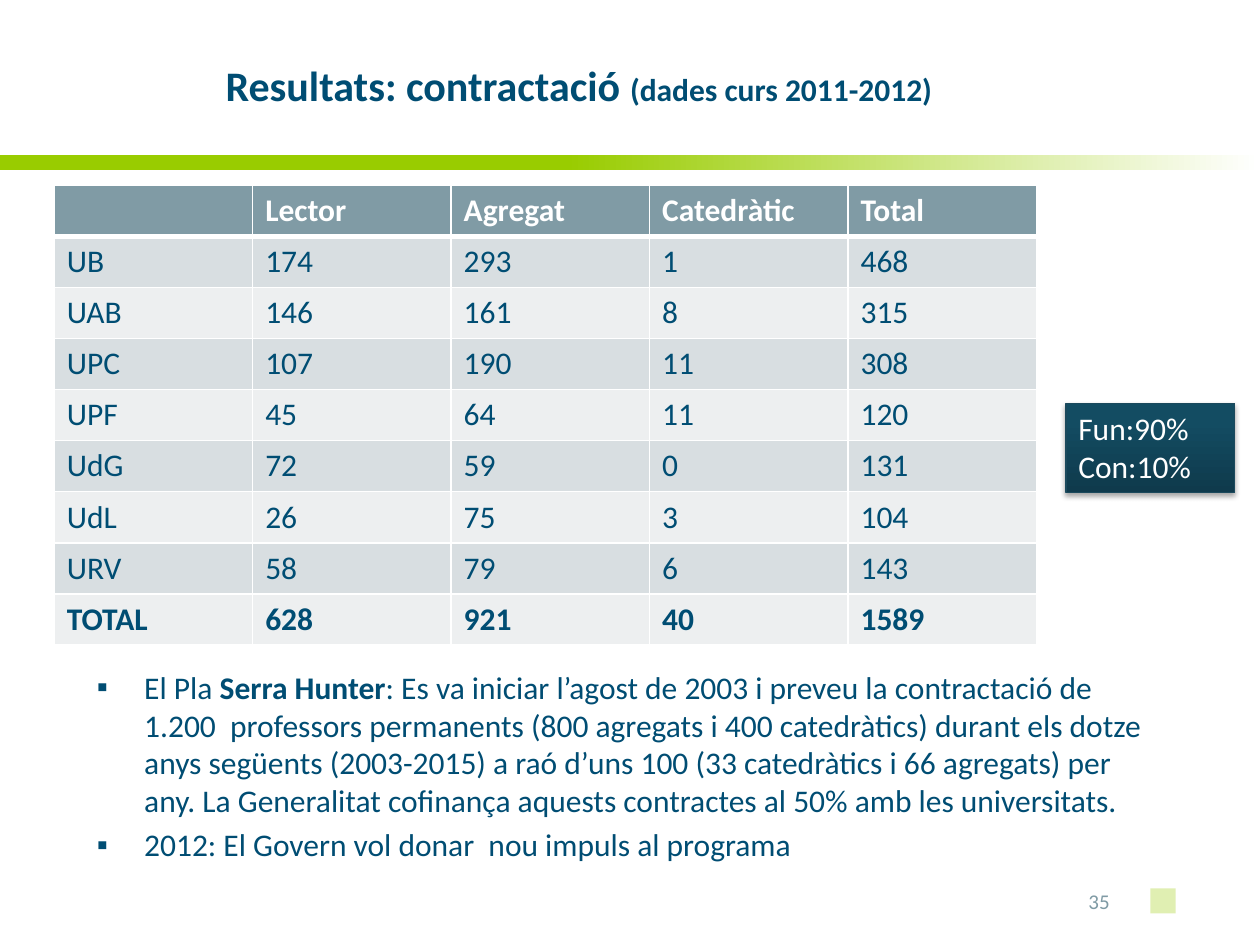
from lxml.etree import SubElement
from pptx import Presentation
from pptx.dml.color import RGBColor
from pptx.enum.shapes import MSO_SHAPE
from pptx.enum.text import MSO_ANCHOR, MSO_AUTO_SIZE, PP_ALIGN
from pptx.oxml import parse_xml
from pptx.oxml.ns import nsdecls, qn
from pptx.util import Pt

NAVY, WHITE, GREEN = "004D73", "FFFFFF", "99CC00"
SLATE, DARK_ROW, LIGHT_ROW = "809BA5", "D8DEE1", "EDEFF0"

HEADINGS = ["", "Lector", "Agregat", "Catedràtic", "Total"]
STAFF = [
    ["UB", "174", "293", "1", "468"],
    ["UAB", "146", "161", "8", "315"],
    ["UPC", "107", "190", "11", "308"],
    ["UPF", "45", "64", "11", "120"],
    ["UdG", "72", "59", "0", "131"],
    ["UdL", "26", "75", "3", "104"],
    ["URV", "58", "79", "6", "143"],
    ["TOTAL", "628", "921", "40", "1589"],
]
BULLETS = [
    [
        ("El Pla ", False),
        ("Serra Hunter", True),
        (": Es va iniciar l’agost de 2003 i preveu la contractació de "
         "1.200  professors permanents (800 agregats i 400 catedràtics) durant els dotze "
         "anys següents (2003-2015) a raó d’uns 100 (33 catedràtics i 66 agregats) per "
         "any. La Generalitat cofinança aquests contractes al 50% amb les universitats.", False),
    ],
    [("2012: El Govern vol donar  nou impuls al programa", False)],
]


def color(value):
    return RGBColor.from_string(value)


class SlideBuilder:
    font_name = "Calibri"
    text_size = 18

    def __init__(self, slide):
        self.slide = slide

    def place(self, shape, left, top, width, height):
        shape.left, shape.top = Pt(left), Pt(top)
        shape.width, shape.height = Pt(width), Pt(height)

    def run(self, paragraph, text, ink=NAVY, size=text_size, bold=False):
        run = paragraph.add_run()
        run.text = text
        run.font.name = self.font_name
        run.font.size = Pt(size)
        run.font.bold = bold
        run.font.color.rgb = color(ink)

    def title(self, box, runs):
        shape = self.slide.shapes.title
        self.place(shape, *box)
        frame = shape.text_frame
        frame.auto_size = MSO_AUTO_SIZE.NONE
        frame.vertical_anchor = MSO_ANCHOR.MIDDLE
        paragraph = frame.paragraphs[0]
        paragraph.alignment = PP_ALIGN.LEFT
        for text, size in runs:
            self.run(paragraph, text, size=size, bold=True)

    def bullets(self, box, items):
        shape = self.slide.placeholders[1]
        self.place(shape, *box)
        frame = shape.text_frame
        frame.auto_size = MSO_AUTO_SIZE.NONE
        for index, runs in enumerate(items):
            paragraph = frame.add_paragraph() if index else frame.paragraphs[0]
            properties = paragraph._p.get_or_add_pPr()
            properties.set("marL", str(Pt(27)))
            properties.set("indent", str(-Pt(27)))
            SubElement(properties, qn("a:buFont"), typeface="Arial")
            SubElement(properties, qn("a:buChar"), char="▪")
            paragraph.space_before = Pt(3.6 if index else 0)
            for text, bold in runs:
                self.run(paragraph, text, bold=bold)

    def label(self, box, text, ink, size):
        shape = self.slide.shapes.add_textbox(*map(Pt, box))
        frame = shape.text_frame
        frame.word_wrap = True
        frame.vertical_anchor = MSO_ANCHOR.MIDDLE
        self.run(frame.paragraphs[0], text, ink, size)

    def rectangle(self, box, fill, line=None):
        shape = self.slide.shapes.add_shape(MSO_SHAPE.RECTANGLE, *map(Pt, box))
        shape.shadow.inherit = False
        shape.fill.solid()
        shape.fill.fore_color.rgb = color(fill)
        if line:
            shape.line.color.rgb = color(line)
            shape.line.width = Pt(0.75)
        else:
            shape.line.fill.background()
        return shape

    def gradient(self, shape, stops, angle):
        stop_list = "".join(
            f'<a:gs pos="{position * 1000}"><a:srgbClr val="{value}"/></a:gs>'
            for position, value in stops
        )
        solid = shape._element.spPr.find(qn("a:solidFill"))
        solid.getparent().replace(solid, parse_xml(
            f'<a:gradFill {nsdecls("a")} rotWithShape="1"><a:gsLst>{stop_list}</a:gsLst>'
            f'<a:lin ang="{angle * 60000}" scaled="0"/></a:gradFill>'
        ))

    def transparency(self, shape, opacity):
        ink = shape._element.spPr.find(qn("a:solidFill"))[0]
        SubElement(ink, qn("a:alpha"), val=str(opacity * 1000))

    def drop_shadow(self, shape, opacity, blur, distance):
        effects = shape._element.spPr.find(qn("a:effectLst"))
        effects.append(parse_xml(
            f'<a:outerShdw {nsdecls("a")} blurRad="{Pt(blur)}" dist="{Pt(distance)}" '
            f'dir="5400000" rotWithShape="0"><a:srgbClr val="000000">'
            f'<a:alpha val="{opacity * 1000}"/></a:srgbClr></a:outerShdw>'
        ))

    def callout(self, box, lines, stops):
        shape = self.rectangle(box, stops[0][1], "1B495C")
        self.gradient(shape, stops, 270)
        self.drop_shadow(shape, 35, 3.1, 1.8)
        frame = shape.text_frame
        frame.word_wrap = True
        frame.vertical_anchor = MSO_ANCHOR.TOP
        for index, text in enumerate(lines):
            paragraph = frame.add_paragraph() if index else frame.paragraphs[0]
            paragraph.alignment = PP_ALIGN.LEFT
            self.run(paragraph, text, WHITE)

    def borders(self, cell, top, bottom):
        properties = cell._tc.get_or_add_tcPr()
        for side, width in (("L", 1), ("R", 1), ("T", top), ("B", bottom)):
            line = SubElement(properties, qn(f"a:ln{side}"), w=str(Pt(width)))
            SubElement(SubElement(line, qn("a:solidFill")), qn("a:srgbClr"), val=WHITE)

    def table(self, box, rows, widths):
        frame = self.slide.shapes.add_table(len(rows), len(widths), *map(Pt, box))
        table = frame.table
        for column, width in zip(table.columns, widths):
            column.width = Pt(width)
        for row_index, values in enumerate(rows):
            table.rows[row_index].height = Pt(box[3] / len(rows))
            header = row_index == 0
            bold = header or row_index == len(rows) - 1
            fill = SLATE if header else DARK_ROW if row_index % 2 else LIGHT_ROW
            for column_index, text in enumerate(values):
                cell = table.cell(row_index, column_index)
                self.borders(cell, 3 if row_index == 1 else 1, 3 if header else 1)
                cell.fill.solid()
                cell.fill.fore_color.rgb = color(fill)
                if text:
                    self.run(cell.text_frame.paragraphs[0], text,
                             WHITE if header else NAVY, bold=bold)


def main():
    presentation = Presentation()
    presentation.slide_width, presentation.slide_height = Pt(720), Pt(540)
    builder = SlideBuilder(presentation.slides.add_slide(presentation.slide_layouts[1]))

    band = builder.rectangle((0, 88.6, 720, 8.6), GREEN)
    builder.gradient(band, [(45, GREEN), (100, WHITE)], 0)
    marker = builder.rectangle((657.4, 507.6, 14.4, 14.4), GREEN)
    builder.transparency(marker, 30)

    builder.title((121.7, 25.9, 550, 45.4),
                  [("Resultats: contractació ", 24), ("(dades curs 2011-2012)", 18)])
    builder.bullets((48.2, 378, 623.5, 110.2), BULLETS)
    builder.label((614.9, 500.4, 39.6, 28.8), "35", SLATE, 12)
    builder.table((31, 105.8, 561.6, 262.8), [HEADINGS] + STAFF, [113.4] * 4 + [108])
    builder.callout((609.1, 230.4, 96.5, 51.1), ["Fun:90%", "Con:10%"],
                    [(0, "0F3A4C"), (80, "134C62"), (100, "114D64")])

    presentation.save("out.pptx")


if __name__ == "__main__":
    main()
